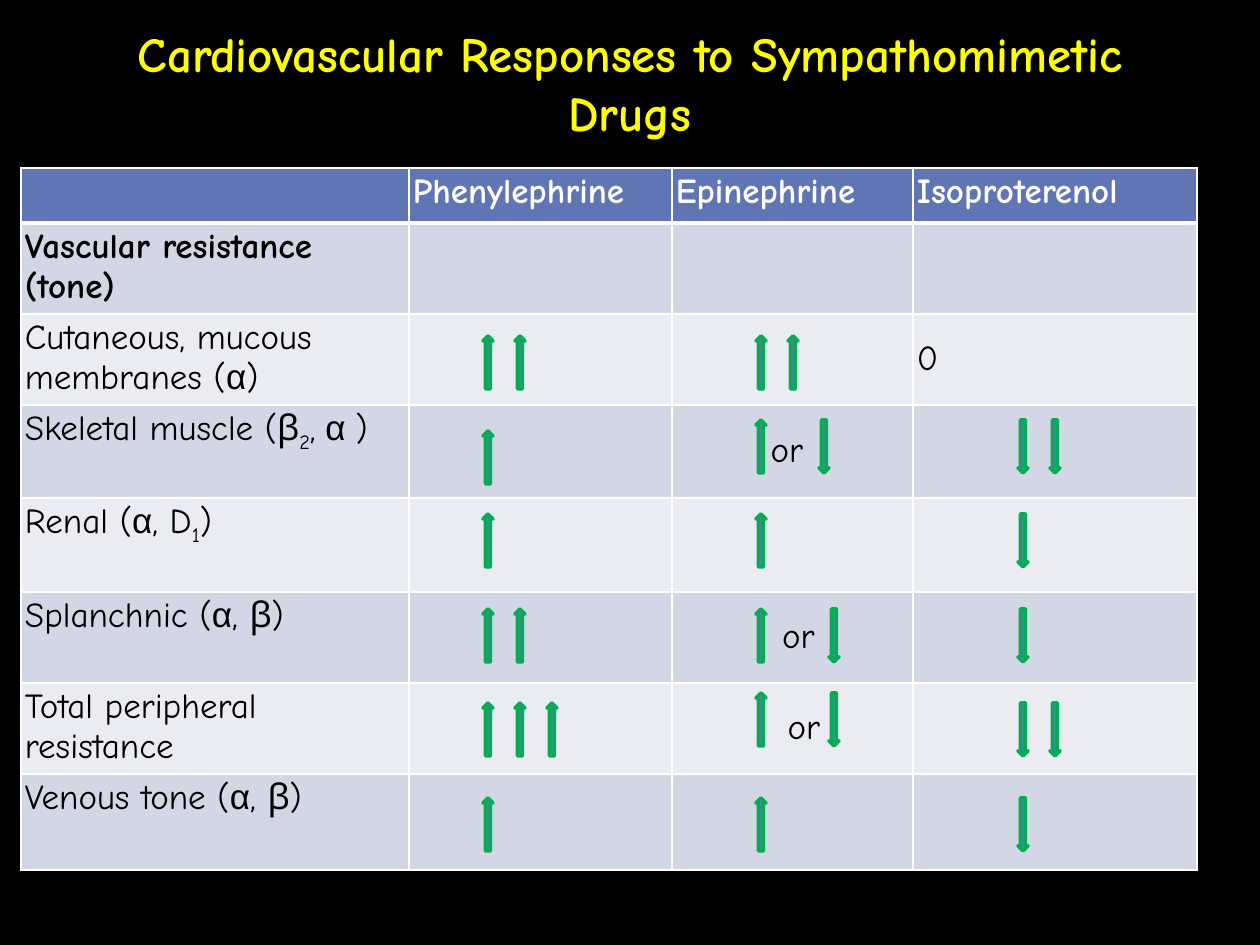
import pptx
import pptx.util
import pptx.dml.color
import pptx.enum.shapes
import pptx.enum.text
import pptx.oxml
import pptx.oxml.ns

COLORS = {
    "background": "000000",
    "title": "FFFF00",
    "header": "6076B4",
    "odd": "D2D6E5",
    "even": "EAECF2",
    "white": "FFFFFF",
    "text": "000000",
    "arrow": "00B050",
}
MAIN_FONT = "Comic Neue"
FORMATS = {
    "title": {"size": pptx.util.Pt(28), "name": MAIN_FONT, "bold": True},
    "bold": {"size": pptx.util.Pt(20), "name": MAIN_FONT, "bold": True},
    "plain": {"size": pptx.util.Pt(20), "name": MAIN_FONT, "bold": False},
    "greek": {"size": pptx.util.Pt(20), "name": "Arial", "bold": False},
    "sub": {"size": pptx.util.Pt(20), "name": MAIN_FONT, "bold": False},
}
MARGINS = {"margin_left": 4, "margin_right": 4, "margin_top": 4, "margin_bottom": 4}
MIDDLE = {"vertical_anchor": pptx.enum.text.MSO_ANCHOR.MIDDLE}

COL_WIDTHS = [388, 263, 241, 284]
ROW_HEIGHTS = [55, 91, 91, 93, 94, 91, 91, 96]
HEADERS = ["Phenylephrine", "Epinephrine", "Isoproterenol"]
LABELS = [
    [("Vascular resistance (tone)", "bold")],
    [("Cutaneous, mucous membranes (", "plain"), ("α", "greek"), (")", "plain")],
    [("Skeletal muscle (β", "plain"), ("2", "sub"), (",", "plain"),
     (" α ", "greek"), (")", "plain")],
    [("Renal (", "plain"), ("α", "greek"), (", D", "plain"), ("1", "sub"), (")", "plain")],
    [("Splanchnic (", "plain"), ("α", "greek"), (", β)", "plain")],
    [("Total peripheral resistance", "plain")],
    [("Venous tone (", "plain"), ("α", "greek"), (", β)", "plain")],
]
OR_MARGINS = {
    3: {"margin_right": 15},
    5: {"margin_left": 16},
    6: {"margin_left": 27},
}

ARROW_STEP = 32
ARROWS = {
    ("up", 483): [(336, 2), (431, 1), (514, 1), (609, 2), (703, 3), (798, 1)],
    ("up", 756): [(336, 2), (420, 1), (514, 1), (609, 1), (693, 1), (798, 1)],
    ("down", 819): [(420, 1)],
    ("down", 829): [(609, 1), (693, 1)],
    ("down", 1018): [(420, 2), (514, 1), (609, 1), (703, 2), (798, 1)],
}
ARROW_TYPES = {
    "up": pptx.enum.shapes.MSO_SHAPE.UP_ARROW,
    "down": pptx.enum.shapes.MSO_SHAPE.DOWN_ARROW,
}


def px(n):
    return pptx.util.Emu(round(n * 914400 / 126))


def rgb(name):
    return pptx.dml.color.RGBColor.from_string(COLORS[name])


def set_attrs(obj, values):
    for key, value in values.items():
        setattr(obj, key, value)


def add_run(p, text, style, color):
    r = p.add_run()
    r.text = text
    set_attrs(r.font, FORMATS[style])
    r.font.color.rgb = rgb(color)
    if style == "sub":
        r._r.get_or_add_rPr().set("baseline", "-25000")


def add_title(s, text):
    sp = s.shapes.title
    set_attrs(sp, {"left": px(63), "top": px(38), "width": px(1134), "height": px(88)})
    tf = sp.text_frame
    set_attrs(tf, {"word_wrap": True, **MIDDLE})
    p = tf.paragraphs[0]
    p.alignment = pptx.enum.text.PP_ALIGN.CENTER
    add_run(p, text, "title", "title")


def set_borders(cell, widths):
    tcPr = cell._tc.get_or_add_tcPr()
    for side, width in widths.items():
        tcPr.append(pptx.oxml.parse_xml(
            f'<a:ln{side} {pptx.oxml.ns.nsdecls("a")} w="{pptx.util.Pt(width)}">'
            f'<a:solidFill><a:srgbClr val="{COLORS["white"]}"/></a:solidFill></a:ln{side}>'))


def format_cell(cell, row):
    set_borders(cell, {"L": 1, "R": 1, "T": 3 if row == 1 else 1, "B": 3 if row == 0 else 1})
    cell.fill.solid()
    cell.fill.fore_color.rgb = rgb("header" if row == 0 else "odd" if row % 2 else "even")
    set_attrs(cell, {key: px(n) for key, n in MARGINS.items()})


def write_cell(cell, runs, color="text"):
    for text, style in runs:
        add_run(cell.text_frame.paragraphs[0], text, style, color)


def add_response_table(s):
    table = s.shapes.add_table(
        len(ROW_HEIGHTS), len(COL_WIDTHS), px(21), px(168),
        px(sum(COL_WIDTHS)), px(sum(ROW_HEIGHTS))).table
    for col, width in zip(table.columns, COL_WIDTHS):
        col.width = px(width)
    for i, height in enumerate(ROW_HEIGHTS):
        table.rows[i].height = px(height)
        for cell in table.rows[i].cells:
            format_cell(cell, i)
    for j, text in enumerate(HEADERS, 1):
        write_cell(table.cell(0, j), [(text, "bold")], "white")
    for i, runs in enumerate(LABELS, 1):
        write_cell(table.cell(i, 0), runs)
    zero = table.cell(2, 3)
    set_attrs(zero, MIDDLE)
    write_cell(zero, [("0", "plain")])
    for i, margins in OR_MARGINS.items():
        cell = table.cell(i, 2)
        set_attrs(cell, {**MIDDLE, **{key: px(n) for key, n in margins.items()}})
        cell.text_frame.paragraphs[0].alignment = pptx.enum.text.PP_ALIGN.CENTER
        write_cell(cell, [("or", "plain")])


def add_arrow(s, direction, x, y):
    sp = s.shapes.add_shape(ARROW_TYPES[direction], px(x), px(y), px(10), px(53))
    sp.shadow.inherit = False
    sp.fill.solid()
    sp.fill.fore_color.rgb = rgb("header")
    sp.line.color.rgb = rgb("arrow")
    sp.line.width = pptx.util.Pt(2)


def main():
    prs = pptx.Presentation()
    set_attrs(prs, {"slide_width": px(1260), "slide_height": px(945)})
    s = prs.slides.add_slide(prs.slide_layouts[5])
    s.background.fill.solid()
    s.background.fill.fore_color.rgb = rgb("background")
    add_title(s, "Cardiovascular Responses to Sympathomimetic Drugs")
    add_response_table(s)
    for (direction, x), groups in ARROWS.items():
        for y, count in groups:
            for i in range(count):
                add_arrow(s, direction, x + i * ARROW_STEP, y)
    prs.save("out.pptx")


if __name__ == "__main__":
    main()
